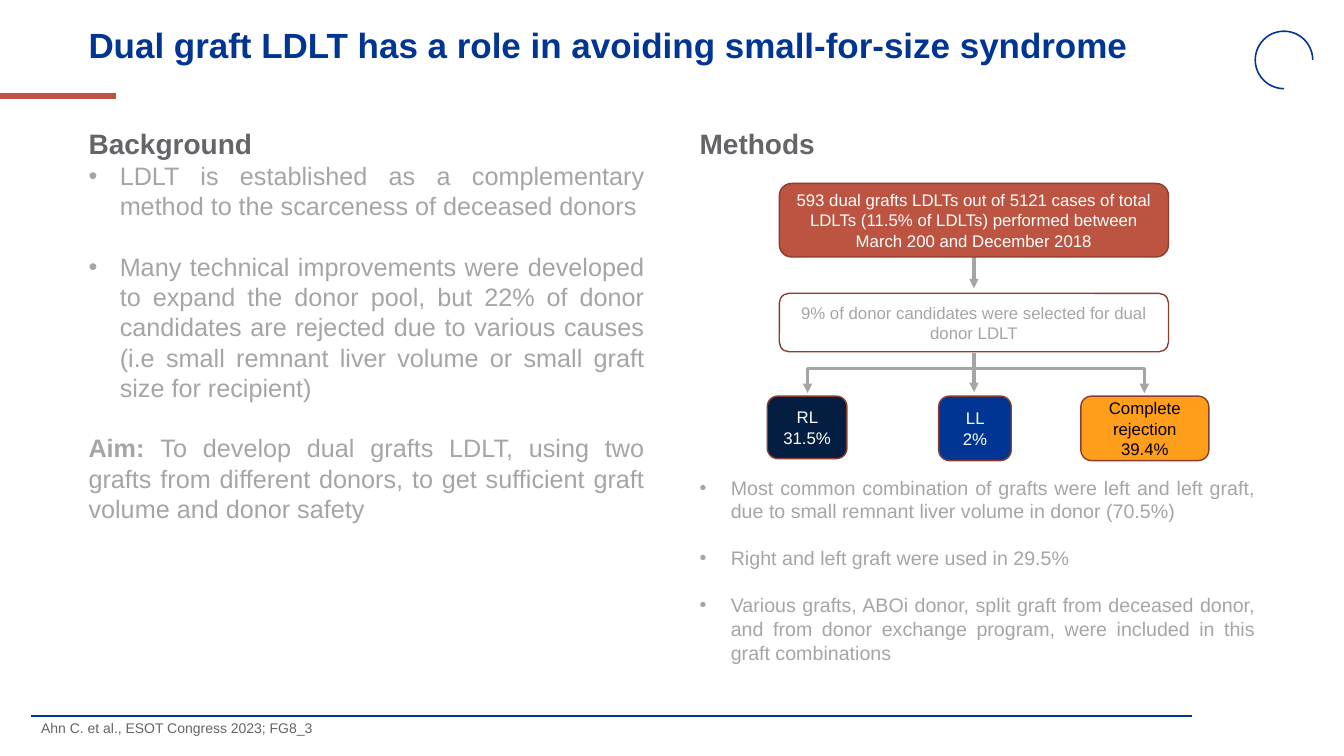
"""Build the slide on dual graft LDLT with its background and methods flowchart."""
import dataclasses
import typing

import lxml.etree
import pptx
import pptx.dml.color
import pptx.enum.dml
import pptx.enum.shapes
import pptx.enum.text
import pptx.oxml.ns
import pptx.util

Inches = pptx.util.Inches
Pt = pptx.util.Pt
Align = pptx.enum.text.PP_ALIGN
Anchor = pptx.enum.text.MSO_ANCHOR
Preset = pptx.enum.shapes.MSO_SHAPE
Route = pptx.enum.shapes.MSO_CONNECTOR

FONT = "Arial"
BLUE, RUST, DARK_RUST, NAVY, ORANGE = "003594", "BC5441", "8B3E30", "041E42", "FF9E1B"
WHITE, BLACK, GREY, SLATE = "FFFFFF", "000000", "A5A5A5", "636569"
FLOW_CENTER = 9.66
BRANCH_TOP = 3.66
LINE_FACTOR = 1.2


@dataclasses.dataclass(frozen=True)
class Line:
    """One paragraph: (text, bold) runs and their format."""
    runs: tuple[tuple[str, bool], ...]
    size: float
    color: str
    align: Align = Align.LEFT
    bullet: bool = False
    gap: bool = False
    spacing: float | None = None


@dataclasses.dataclass(frozen=True)
class TextBlock:
    """A text box with its paragraphs."""
    left: float
    top: float
    width: float
    height: float
    lines: tuple[Line, ...]
    anchor: Anchor = Anchor.TOP


@dataclasses.dataclass(frozen=True)
class FlowBox:
    """A rounded box of the flowchart."""
    left: float
    top: float
    width: float
    height: float
    text: str
    fill: str
    color: str = WHITE


@dataclasses.dataclass(frozen=True)
class Link:
    """A straight or bent line between two points."""
    start: tuple[float, float]
    end: tuple[float, float]
    color: str = GREY
    weight: float = 2.25
    arrow: bool = True
    bent: bool = False


def bullet_line(text: str, size: float, gap: bool = False) -> Line:
    """Return a justified grey bullet paragraph."""
    return Line(((text, False),), size, GREY, Align.JUSTIFY, bullet=True, gap=gap)


def heading(text: str) -> Line:
    """Return a column heading."""
    return Line(((text, True),), 20, SLATE)


TEXT_BLOCKS = (
    TextBlock(0.78, 0.1, 11.5, 0.73, (
        Line((("Dual graft LDLT has a role in avoiding small-for-size syndrome", True),),
             25, BLUE, spacing=0.9),
    ), Anchor.MIDDLE),
    TextBlock(0.31, 7.11, 7.84, 0.34, (
        Line((("Ahn C. et al., ESOT Congress 2023; FG8_3", False),), 10, SLATE, spacing=0.9),
    )),
    TextBlock(0.78, 1.21, 5.71, 4.07, (
        heading("Background"),
        bullet_line("LDLT is established as a complementary method to the scarceness "
                    "of deceased donors", 18),
        bullet_line("Many technical improvements were developed to expand the donor pool, "
                    "but 22% of donor candidates are rejected due to various causes "
                    "(i.e small remnant liver volume or small graft size for recipient)",
                    18, gap=True),
        Line((("Aim: ", True),
              ("To develop dual grafts LDLT, using two grafts from different donors, "
               "to get sufficient graft volume and donor safety", False)),
             18, GREY, Align.JUSTIFY, gap=True),
    )),
    TextBlock(6.84, 1.21, 5.71, 0.44, (heading("Methods"),)),
    TextBlock(6.84, 4.67, 5.71, 1.99, (
        bullet_line("Most common combination of grafts were left and left graft, "
                    "due to small remnant liver volume in donor (70.5%)", 14),
        bullet_line("Right and left graft were used in 29.5%", 14, gap=True),
        bullet_line("Various grafts, ABOi donor, split graft from deceased donor, and from "
                    "donor exchange program, were included in this graft combinations",
                    14, gap=True),
    )),
)
FLOW_BOXES = (
    FlowBox(7.73, 1.82, 3.86, 0.73,
            "593 dual grafts LDLTs out of 5121 cases of total LDLTs (11.5% of LDLTs) "
            "performed between March 200 and December 2018", RUST),
    FlowBox(7.73, 2.91, 3.86, 0.58,
            "9% of donor candidates were selected for dual donor LDLT", WHITE, GREY),
    FlowBox(7.61, 3.93, 0.79, 0.62, "RL 31.5%", NAVY),
    FlowBox(9.31, 3.93, 0.72, 0.64, "LL 2%", BLUE),
    FlowBox(10.72, 3.93, 1.27, 0.64, "Complete rejection 39.4%", ORANGE, BLACK),
)
LINKS = (
    Link((0, 0.95), (1.15, 0.95), RUST, 4.5, arrow=False),
    Link((0.31, 7.1), (11.82, 7.1), BLUE, 1.5, arrow=False),
    Link((FLOW_CENTER, 2.55), (FLOW_CENTER, 2.86)),
    Link((FLOW_CENTER, 3.5), (FLOW_CENTER, BRANCH_TOP), arrow=False),
    Link((FLOW_CENTER, BRANCH_TOP), (FLOW_CENTER, 3.89)),
    Link((FLOW_CENTER, BRANCH_TOP), (8.01, 3.9), bent=True),
    Link((FLOW_CENTER, BRANCH_TOP), (11.35, 3.9), bent=True),
)


def set_color(color_format: typing.Any, color: str) -> None:
    """Apply a hex colour to a font, fill or line colour."""
    color_format.rgb = pptx.dml.color.RGBColor.from_string(color)


def apply_format(target: typing.Any, values: dict[str, typing.Any]) -> None:
    """Set each named attribute on the target."""
    for name, value in values.items():
        setattr(target, name, value)


def add_child(parent: typing.Any, tag: str, **attributes: str) -> typing.Any:
    """Append a DrawingML element."""
    return lxml.etree.SubElement(parent, pptx.oxml.ns.qn(tag), attributes)


def write_line(paragraph: typing.Any, line: Line) -> None:
    """Fill a paragraph from its description."""
    if line.bullet:
        properties = paragraph._p.get_or_add_pPr()
        properties.set("marL", str(Inches(0.31)))
        properties.set("indent", str(-Inches(0.31)))
        add_child(properties, "a:buFont", typeface=FONT)
        add_child(properties, "a:buChar", char="•")
    space = Pt(line.size * LINE_FACTOR) if line.gap else Pt(0)
    apply_format(paragraph, {"alignment": line.align, "line_spacing": line.spacing,
                             "space_before": space})
    for text, bold in line.runs:
        run = paragraph.add_run()
        run.text = text
        apply_format(run.font, {"name": FONT, "size": Pt(line.size), "bold": bold})
        set_color(run.font.color, line.color)


def write_lines(shape: typing.Any, lines: tuple[Line, ...], anchor: Anchor) -> None:
    """Fill the text frame of a shape."""
    frame = shape.text_frame
    apply_format(frame, {"word_wrap": True, "vertical_anchor": anchor})
    for index, line in enumerate(lines):
        write_line(frame.add_paragraph() if index else frame.paragraphs[0], line)


def add_text_block(slide: typing.Any, block: TextBlock) -> None:
    """Draw a text box."""
    shape = slide.shapes.add_textbox(
        *map(Inches, (block.left, block.top, block.width, block.height)))
    write_lines(shape, block.lines, block.anchor)


def add_flow_box(slide: typing.Any, box: FlowBox) -> None:
    """Draw a rounded flowchart box."""
    shape = slide.shapes.add_shape(
        Preset.ROUNDED_RECTANGLE, *map(Inches, (box.left, box.top, box.width, box.height)))
    shape.shadow.inherit = False
    shape.fill.solid()
    set_color(shape.fill.fore_color, box.fill)
    set_color(shape.line.color, DARK_RUST)
    shape.line.width = Pt(1)
    write_lines(shape, (Line(((box.text, False),), 12, box.color, Align.CENTER),), Anchor.MIDDLE)


def add_link(slide: typing.Any, link: Link) -> None:
    """Draw a line, with an arrowhead or a bend where asked."""
    route = Route.ELBOW if link.bent else Route.STRAIGHT
    connector = slide.shapes.add_connector(route, *map(Inches, (*link.start, *link.end)))
    set_color(connector.line.color, link.color)
    connector.line.width = Pt(link.weight)
    properties = connector._element.spPr
    if link.bent:
        guides = properties.find(".//" + pptx.oxml.ns.qn("a:avLst"))
        add_child(guides, "a:gd", name="adj1", fmla="val 100000")
    if link.arrow:
        add_child(connector.line._get_or_add_ln(), "a:tailEnd", type="triangle")
    add_child(properties, "a:effectLst")


def add_open_ring(slide: typing.Any) -> None:
    """Draw the three-quarter ring in the top right corner."""
    ring = slide.shapes.add_shape(Preset.ARC, *map(Inches, (12.45, 0.31, 0.57, 0.57)))
    ring.shadow.inherit = False
    ring.adjustments[0] = 54.0
    ring.adjustments[1] = 0.0
    ring.fill.background()
    set_color(ring.line.color, BLUE)
    ring.line.width = Pt(1.13)


def main() -> None:
    """Assemble and save the slide."""
    presentation = pptx.Presentation()
    apply_format(presentation, {"slide_width": Inches(13.33), "slide_height": Inches(7.5)})
    slide = presentation.slides.add_slide(presentation.slide_layouts[6])
    add_open_ring(slide)
    for link in LINKS:
        add_link(slide, link)
    for box in FLOW_BOXES:
        add_flow_box(slide, box)
    for block in TEXT_BLOCKS:
        add_text_block(slide, block)
    presentation.save("out.pptx")


if __name__ == "__main__":
    main()
